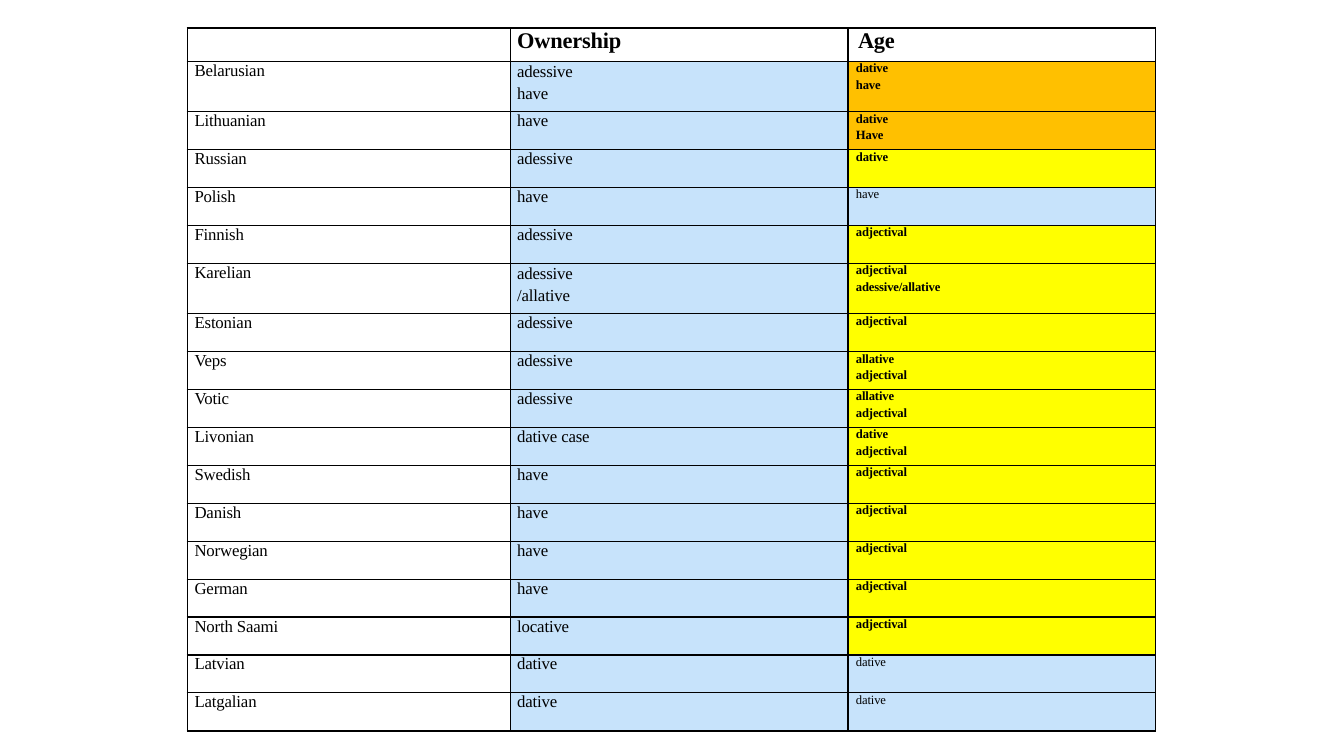
from dataclasses import dataclass

from lxml.etree import SubElement
from pptx import Presentation
from pptx.dml.color import RGBColor
from pptx.oxml.ns import qn
from pptx.util import Emu, Inches, Pt


@dataclass(frozen=True)
class Theme:
    """Colours, type sizes and line widths of the slide."""
    font: str = "Times New Roman"
    ink: str = "000000"
    blue: str = "C7E3FB"
    yellow: str = "FFFF00"
    orange: str = "FFC000"
    heading: float = 16
    body: float = 12
    small: float = 9
    thin: float = 1
    thick: float = 1.5


THEME = Theme()
SLIDE_SIZE = (13.33, 7.5)
TABLE_BOX = (1.86, 0.28, 9.6, 6.97)
COLUMN_WIDTHS = (3.2, 3.35, 3.05)
HEADER_HEIGHT, TALL_HEIGHT = 0.33, 0.5
INDENTS = (0.07, 0.07, 0.08)
HEADINGS = ("", "Ownership", "Age")
FAMILY_END = "Livonian"
LANGUAGES = [
    ("Belarusian", "adessive\nhave", "dative\nhave", THEME.orange),
    ("Lithuanian", "have", "dative\nHave", THEME.orange),
    ("Russian", "adessive", "dative", THEME.yellow),
    ("Polish", "have", "have", THEME.blue),
    ("Finnish", "adessive", "adjectival", THEME.yellow),
    ("Karelian", "adessive\n/allative", "adjectival\nadessive/allative", THEME.yellow),
    ("Estonian", "adessive", "adjectival", THEME.yellow),
    ("Veps", "adessive", "allative\nadjectival", THEME.yellow),
    ("Votic", "adessive", "allative\nadjectival", THEME.yellow),
    ("Livonian", "dative case", "dative\nadjectival", THEME.yellow),
    ("Swedish", "have", "adjectival", THEME.yellow),
    ("Danish", "have", "adjectival", THEME.yellow),
    ("Norwegian", "have", "adjectival", THEME.yellow),
    ("German", "have", "adjectival", THEME.yellow),
    ("North Saami", "locative", "adjectival", THEME.yellow),
    ("Latvian", "dative", "dative", THEME.blue),
    ("Latgalian", "dative", "dative", THEME.blue),
]


def draw_borders(cell, thick_sides):
    """Rule all four sides of a cell, the named ones thicker."""
    properties = cell._tc.get_or_add_tcPr()
    for side in "LRTB":
        width = THEME.thick if side in thick_sides else THEME.thin
        line = SubElement(properties, qn(f"a:ln{side}"), w=str(Pt(width)))
        fill = SubElement(line, qn("a:solidFill"))
        SubElement(fill, qn("a:srgbClr"), val=THEME.ink)


def paint(cell, colour):
    """Fill a cell with a colour, or leave it clear."""
    if colour:
        cell.fill.solid()
        cell.fill.fore_color.rgb = RGBColor.from_string(colour)
    else:
        cell.fill.background()


def write(cell, text, size, bold, indent):
    """Write each line of text as a paragraph in a cell."""
    cell.margin_left = Inches(indent)
    cell.margin_right = cell.margin_top = cell.margin_bottom = 0
    lines = text.split("\n") if text else []
    for index, words in enumerate(lines):
        frame = cell.text_frame
        paragraph = frame.add_paragraph() if index else frame.paragraphs[0]
        later_gap = 2.5 if size == THEME.body else 1.8
        paragraph.space_before = Pt(later_gap if index else 0.2)
        if size == THEME.body and len(lines) > 1 and index == 0:
            paragraph.line_spacing = Pt(14.3)
        run = paragraph.add_run()
        run.text = words
        run.font.name = THEME.font
        run.font.size = Pt(size)
        run.font.bold = bold
        run.font.color.rgb = RGBColor.from_string(THEME.ink)
        run.font._element.set("spc", "-10")


def language_cells(name, ownership, age, colour):
    """Give the text, size, weight and fill of one language's cells."""
    return [
        (name, THEME.body, False, None),
        (ownership, THEME.body, False, THEME.blue),
        (age, THEME.small, colour != THEME.blue, colour),
    ]


def add_language_table(slide, box):
    """Place the table of ownership and age constructions in its box."""
    rows = [[(text, THEME.heading, True, None) for text in HEADINGS]]
    rows += [language_cells(*language) for language in LANGUAGES]
    table = slide.shapes.add_table(len(rows), len(HEADINGS), *map(Inches, box)).table
    table.first_row = table.horz_banding = False
    for column, width in zip(table.columns, COLUMN_WIDTHS):
        column.width = Inches(width)

    tall = ["\n" in row[1][0] for row in rows]
    plain_rows = len(rows) - 1 - sum(tall)
    plain_height = (box[3] - HEADER_HEIGHT - TALL_HEIGHT * sum(tall)) / plain_rows
    family_end = [row[0][0] for row in rows].index(FAMILY_END)
    last_row = len(rows) - 1
    for r, row in enumerate(rows):
        height = TALL_HEIGHT if tall[r] else plain_height
        table.rows[r].height = Emu(Inches(height if r else HEADER_HEIGHT))
        for c, (text, size, bold, colour) in enumerate(row):
            cell = table.cell(r, c)
            sides = "L" if c == 0 else ""
            sides += "T" if r in (0, family_end + 1) else ""
            sides += "B" if r in (family_end, last_row) else ""
            draw_borders(cell, sides)
            paint(cell, colour)
            indent = 0.1 if r == 0 and c == 2 else INDENTS[c]
            write(cell, text, size, bold, indent)


def main():
    """Build the slide and save it."""
    deck = Presentation()
    deck.slide_width, deck.slide_height = map(Inches, SLIDE_SIZE)
    slide = deck.slides.add_slide(deck.slide_layouts[6])
    add_language_table(slide, TABLE_BOX)
    deck.save("out.pptx")


if __name__ == "__main__":
    main()
